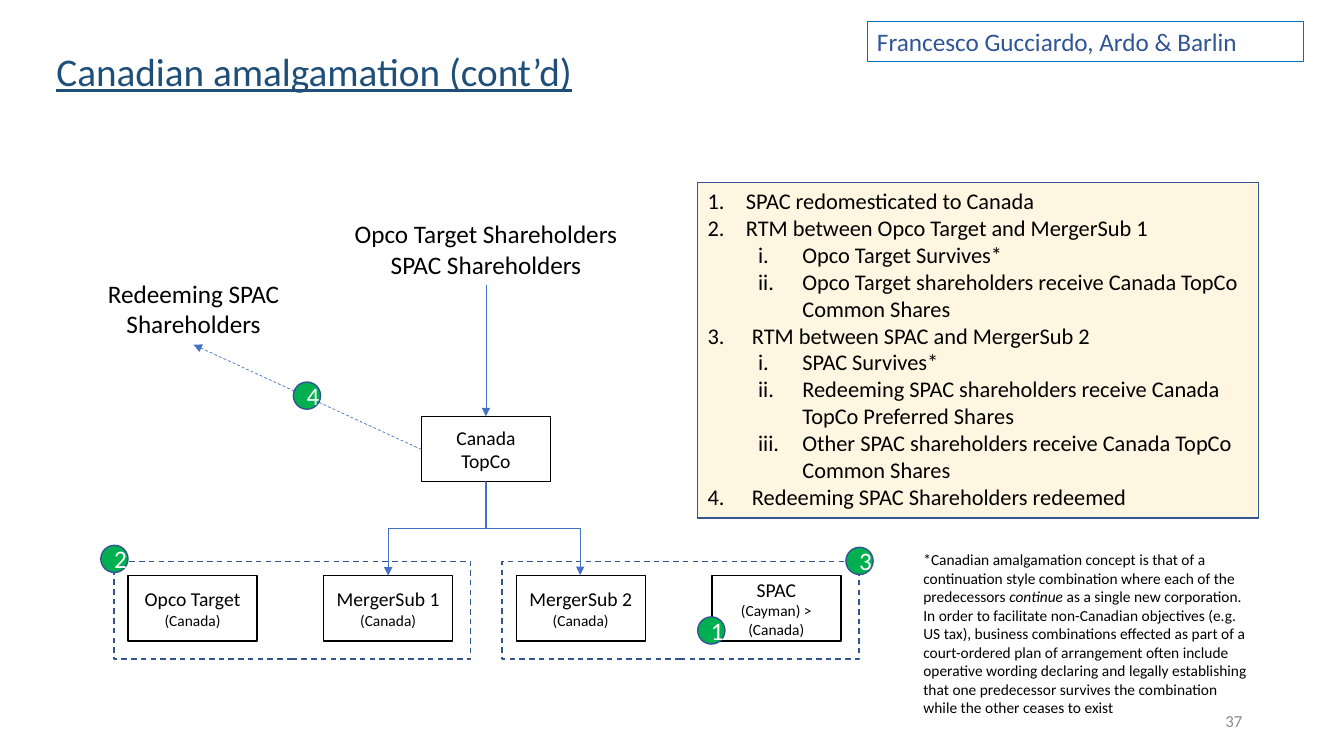
from dataclasses import dataclass

from lxml import etree
from pptx import Presentation
from pptx import util as u
from pptx.dml.color import RGBColor
from pptx.enum import dml, shapes, text
from pptx.oxml import ns

Inches = u.Inches


@dataclass(frozen=True)
class Theme:
    font: str = "Calibri"
    black: str = "000000"
    white: str = "FFFFFF"
    gray: str = "8C8C8C"
    navy: str = "325491"
    arrow: str = "4472C4"
    title: str = "1F4E79"
    speaker: str = "2F5597"
    speaker_line: str = "0070C0"
    cream: str = "FFF6E1"
    green: str = "00B050"
    title_size: int = 28
    label_size: int = 18
    list_size: int = 16
    entity_size: int = 14
    number_size: int = 12
    small_size: int = 11


theme = Theme()
LEFT, CENTER, RIGHT = text.PP_ALIGN.LEFT, text.PP_ALIGN.CENTER, text.PP_ALIGN.RIGHT
RECTANGLE, OVAL = shapes.MSO_SHAPE.RECTANGLE, shapes.MSO_SHAPE.OVAL


def write(shape, lines, size, color, align=LEFT, anchor=text.MSO_ANCHOR.TOP, wrap=True):
    """Fill a shape with one paragraph per line, in one size and colour."""
    frame = shape.text_frame
    frame.text = "\n".join(lines)
    frame.word_wrap = wrap
    frame.vertical_anchor = anchor
    for paragraph in frame.paragraphs:
        paragraph.alignment = align
        for run in paragraph.runs:
            run.font.name = theme.font
            run.font.size = u.Pt(size)
            run.font.color.rgb = RGBColor.from_string(color)
    return frame


def add_box(kind, left, top, width, height, line, fill=None, weight=1, dashed=False):
    shape = slide.shapes.add_shape(
        kind, Inches(left), Inches(top), Inches(width), Inches(height))
    shape.shadow.inherit = False
    if fill:
        shape.fill.solid()
        shape.fill.fore_color.rgb = RGBColor.from_string(fill)
    else:
        shape.fill.background()
    shape.line.color.rgb = RGBColor.from_string(line)
    shape.line.width = u.Pt(weight)
    if dashed:
        shape.line.dash_style = dml.MSO_LINE.DASH
    return shape


presentation = Presentation()
presentation.slide_width = Inches(13.33)
presentation.slide_height = Inches(7.5)
slide = presentation.slides.add_slide(presentation.slide_layouts[5])

# Title and speaker
title = slide.shapes.title
title.left, title.top = Inches(0.46), Inches(0.42)
title.width, title.height = Inches(12.47), Inches(0.57)
frame = write(title, ["Canadian amalgamation (cont’d)"], theme.title_size, theme.title)
frame.auto_size = text.MSO_AUTO_SIZE.NONE
frame.paragraphs[0].runs[0].font.underline = True

speaker = add_box(RECTANGLE, 8.6, 0.21, 4.33, 0.4, theme.speaker_line, weight=0.75)
write(speaker, ["Francesco Gucciardo, Ardo & Barlin"], theme.label_size, theme.speaker)

# Dashed frames around each merging pair, and the entities
for left in (1.13, 4.98):
    add_box(RECTANGLE, left, 5.57, 3.54, 0.97, theme.navy, dashed=True)

entities = [
    (4.18, 4.13, ["Canada TopCo"]),
    (1.27, 5.71, ["Opco Target", "(Canada)"]),
    (3.21, 5.71, ["MergerSub 1", "(Canada)"]),
    (5.12, 5.71, ["MergerSub 2", "(Canada)"]),
    (7.06, 5.71, ["SPAC", "(Cayman) > (Canada)"]),
]
for left, top, lines in entities:
    entity = add_box(RECTANGLE, left, top, 1.28, 0.65, theme.black)
    frame = write(entity, lines, theme.entity_size, theme.black, CENTER,
                  text.MSO_ANCHOR.MIDDLE)
    for paragraph in frame.paragraphs[1:]:
        paragraph.runs[0].font.size = u.Pt(theme.small_size)

# Arrows: kind, start, end, rotation in degrees, dashed
STRAIGHT, ELBOW = shapes.MSO_CONNECTOR.STRAIGHT, shapes.MSO_CONNECTOR.ELBOW
arrows = [
    (ELBOW, (3.87, 4.76), (4.8, 5.73), 90, False),
    (ELBOW, (5.75, 4.77), (4.82, 5.71), 270, False),
    (STRAIGHT, (4.82, 2.83), (4.82, 4.13), 0, False),
    (STRAIGHT, (4.18, 4.46), (1.92, 3.42), 0, True),
]
for kind, start, end, rotation, dashed in arrows:
    arrow = slide.shapes.add_connector(kind, *map(Inches, start + end))
    arrow.line.color.rgb = RGBColor.from_string(theme.arrow)
    arrow.line.width = u.Pt(0.5)
    if dashed:
        arrow.line.dash_style = dml.MSO_LINE.DASH
    properties = arrow._element.spPr
    if rotation:
        properties.find(ns.qn("a:xfrm")).set("rot", str(rotation * 60000))
    etree.SubElement(properties.find(ns.qn("a:ln")), ns.qn("a:tailEnd"), type="triangle")
    etree.SubElement(properties, ns.qn("a:effectLst"))

# Step markers
for step, left, top in [(1, 6.92, 6.12), (2, 1, 5.41), (3, 8.39, 5.43), (4, 2.91, 3.79)]:
    marker = add_box(OVAL, left, top, 0.27, 0.27, theme.navy, theme.green)
    write(marker, [str(step)], theme.label_size, theme.white, CENTER,
          text.MSO_ANCHOR.MIDDLE)

# Shareholder labels
labels = [
    (3.4, 2.12, 2.84, ["Opco Target Shareholders", "SPAC Shareholders"]),
    (0.93, 2.71, 1.98, ["Redeeming SPAC", "Shareholders"]),
]
for left, top, width, lines in labels:
    label = slide.shapes.add_textbox(Inches(left), Inches(top), Inches(width), Inches(0.71))
    write(label, lines, theme.label_size, theme.black, CENTER, wrap=False)

# Numbered steps: level, indent, wording
add_box(RECTANGLE, 6.92, 1.81, 5.56, 3.33, theme.navy, theme.cream)
steps = [
    (0, 0.38, "SPAC redomesticated to Canada"),
    (0, 0.38, "RTM between Opco Target and MergerSub 1"),
    (1, 0.44, "Opco Target Survives*"),
    (1, 0.44, "Opco Target shareholders receive Canada TopCo Common Shares"),
    (0, 0.44, "RTM between SPAC and MergerSub 2"),
    (1, 0.44, "SPAC Survives*"),
    (1, 0.44, "Redeeming SPAC shareholders receive Canada TopCo Preferred Shares"),
    (1, 0.44, "Other SPAC shareholders receive Canada TopCo Common Shares"),
    (0, 0.44, "Redeeming SPAC Shareholders redeemed"),
]
step_list = slide.shapes.add_textbox(Inches(6.92), Inches(1.81), Inches(5.73), Inches(3.33))
frame = write(step_list, [wording for _, _, wording in steps], theme.list_size, theme.black)
for paragraph, (level, indent, _) in zip(frame.paragraphs, steps):
    paragraph.level = level
    properties = paragraph._p.get_or_add_pPr()
    properties.set("marL", str(Inches(indent + 0.5 * level)))
    properties.set("indent", str(-Inches(indent)))
    etree.SubElement(properties, ns.qn("a:buFont"), typeface="+mj-lt")
    etree.SubElement(properties, ns.qn("a:buAutoNum"),
                     type="romanLcPeriod" if level else "arabicPeriod")

# Footnote and slide number
footnote = slide.shapes.add_textbox(Inches(9.06), Inches(5.41), Inches(3.43), Inches(1.77))
paragraph = footnote.text_frame.paragraphs[0]
footnote_parts = [
    "*Canadian amalgamation concept is that of a continuation style combination "
    "where each of the predecessors ",
    "continue",
    " as a single new corporation. In order to facilitate non-Canadian objectives "
    "(e.g. US tax), business combinations effected as part of a court-ordered plan "
    "of arrangement often include operative wording declaring and legally "
    "establishing that one predecessor survives the combination while the other "
    "ceases to exist",
]
footnote.text_frame.word_wrap = True
for part in footnote_parts:
    run = paragraph.add_run()
    run.text = part
    run.font.name = theme.font
    run.font.size = u.Pt(theme.small_size)
    run.font.color.rgb = RGBColor.from_string(theme.black)
    run.font.italic = part == "continue"

number = slide.shapes.add_textbox(Inches(9.42), Inches(6.95), Inches(3), Inches(0.4))
write(number, ["37"], theme.number_size, theme.gray, RIGHT, text.MSO_ANCHOR.MIDDLE)

presentation.save("out.pptx")
